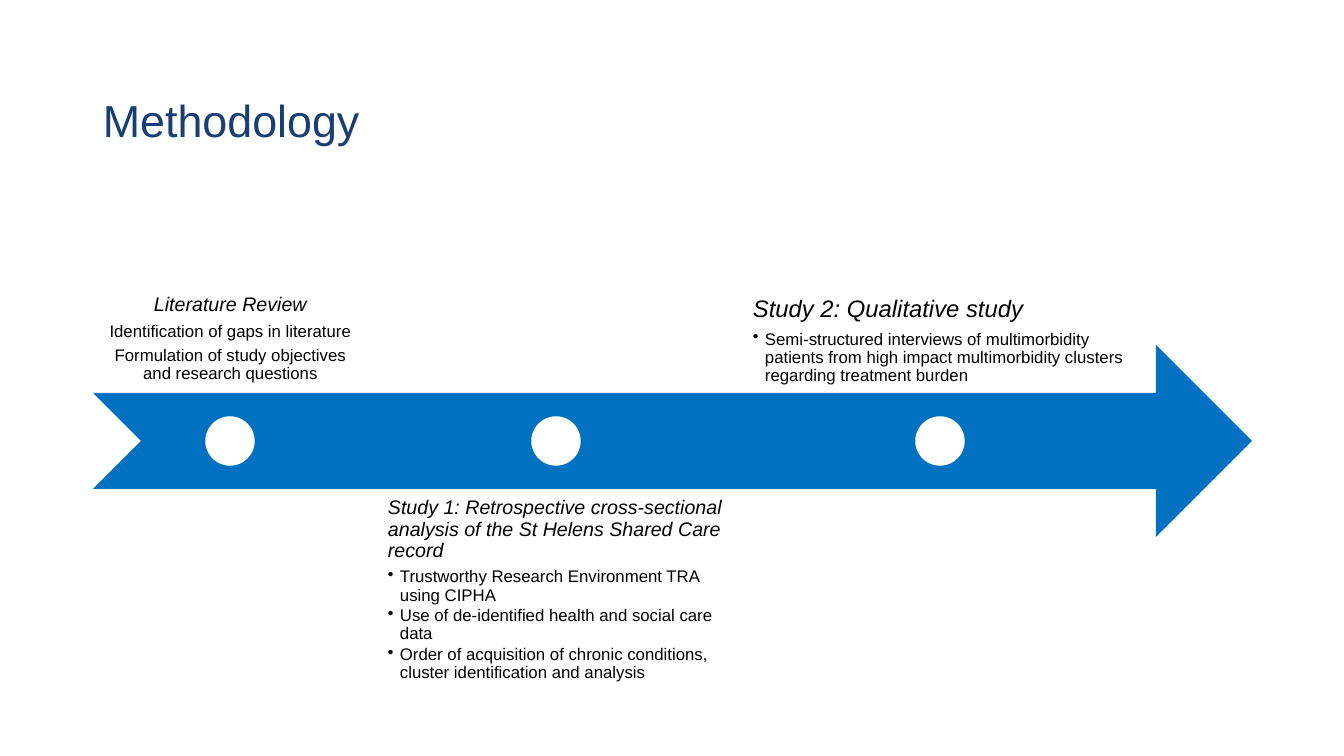
import pptx
import pptx.util
import pptx.dml.color
import pptx.enum.shapes
import pptx.enum.text
import lxml.etree

PX = 914400 / 100.8
COLORS = {"title": "193E72", "arrow": "0070C0", "text": "000000", "dot": "FFFFFF"}
ANCHOR = pptx.enum.text.MSO_ANCHOR
ALIGN = pptx.enum.text.PP_ALIGN
SHAPE = pptx.enum.shapes.MSO_SHAPE


def px(*lengths):
    return [pptx.util.Emu(round(length * PX)) for length in lengths]


def write(frame, text, size, color="text", italic=False, align=ALIGN.LEFT, after=0, bullet=False):
    paragraph = frame.paragraphs[0]
    if paragraph.runs:
        paragraph = frame.add_paragraph()
    paragraph.alignment = align
    paragraph.line_spacing = 0.9
    paragraph.space_after = pptx.util.Pt(after)
    if bullet:
        indent = px(12)[0]
        properties = paragraph._p.get_or_add_pPr()
        properties.set("marL", str(indent))
        properties.set("indent", str(-indent))
        mark = lxml.etree.SubElement(properties, pptx.oxml.ns.qn("a:buChar"))
        mark.set("char", "•")
    run = paragraph.add_run()
    run.text = text
    run.font.name = "Arial"
    run.font.size = pptx.util.Pt(size)
    run.font.italic = italic
    run.font.color.rgb = pptx.dml.color.RGBColor.from_string(COLORS[color])


deck = pptx.Presentation()
deck.slide_width, deck.slide_height = px(1344, 756)
slide = deck.slides.add_slide(deck.slide_layouts[6])

title = slide.shapes.add_textbox(*px(93, 61, 1159, 125)).text_frame
title.word_wrap = True
title.vertical_anchor = ANCHOR.MIDDLE
write(title, "Methodology", 32, color="title")

ARROW_TOP, BAND = 345, 192
arrow = slide.shapes.add_shape(SHAPE.NOTCHED_RIGHT_ARROW, *px(93, ARROW_TOP, 1159, BAND))
arrow.shadow.inherit = False
arrow.fill.solid()
arrow.fill.fore_color.rgb = pptx.dml.color.RGBColor.from_string(COLORS["arrow"])
arrow.line.fill.background()

stages = [
    (93, 202, 275, 11, ANCHOR.BOTTOM, ALIGN.CENTER, 14, "Literature Review",
     ["Identification of gaps in literature",
      "Formulation of study objectives and research questions"]),
    (379, 489, 354, 9, ANCHOR.TOP, ALIGN.LEFT, 14,
     "Study 1: Retrospective cross-sectional analysis of the St Helens Shared Care record",
     ["Trustworthy Research Environment TRA using CIPHA",
      "Use of de-identified health and social care data",
      "Order of acquisition of chronic conditions, cluster identification and analysis"]),
    (744, 202, 392, 9, ANCHOR.BOTTOM, ALIGN.LEFT, 17, "Study 2: Qualitative study",
     ["Semi-structured interviews of multimorbidity patients from high impact "
      "multimorbidity clusters regarding treatment burden"]),
]
DOT = 48

for left, top, width, inset, anchor, align, heading_size, heading, details in stages:
    stage = slide.shapes.add_textbox(*px(left, top, width, BAND)).text_frame
    stage.word_wrap = True
    stage.vertical_anchor = anchor
    stage.margin_left, stage.margin_top, stage.margin_right, stage.margin_bottom = px(*[inset] * 4)
    write(stage, heading, heading_size, italic=True, align=align, after=round(heading_size * 0.35, 1))
    bulleted = align == ALIGN.LEFT
    for detail in details:
        write(stage, detail, 12, align=align, after=1.8 if bulleted else 4.2, bullet=bulleted)

    dot = slide.shapes.add_shape(
        SHAPE.OVAL, *px(left + (width - DOT) // 2, ARROW_TOP + (BAND - DOT) // 2, DOT, DOT))
    dot.shadow.inherit = False
    dot.fill.solid()
    dot.fill.fore_color.rgb = pptx.dml.color.RGBColor.from_string(COLORS["dot"])
    dot.line.color.rgb = pptx.dml.color.RGBColor.from_string(COLORS["dot"])
    dot.line.width = pptx.util.Pt(1)

deck.save("out.pptx")
